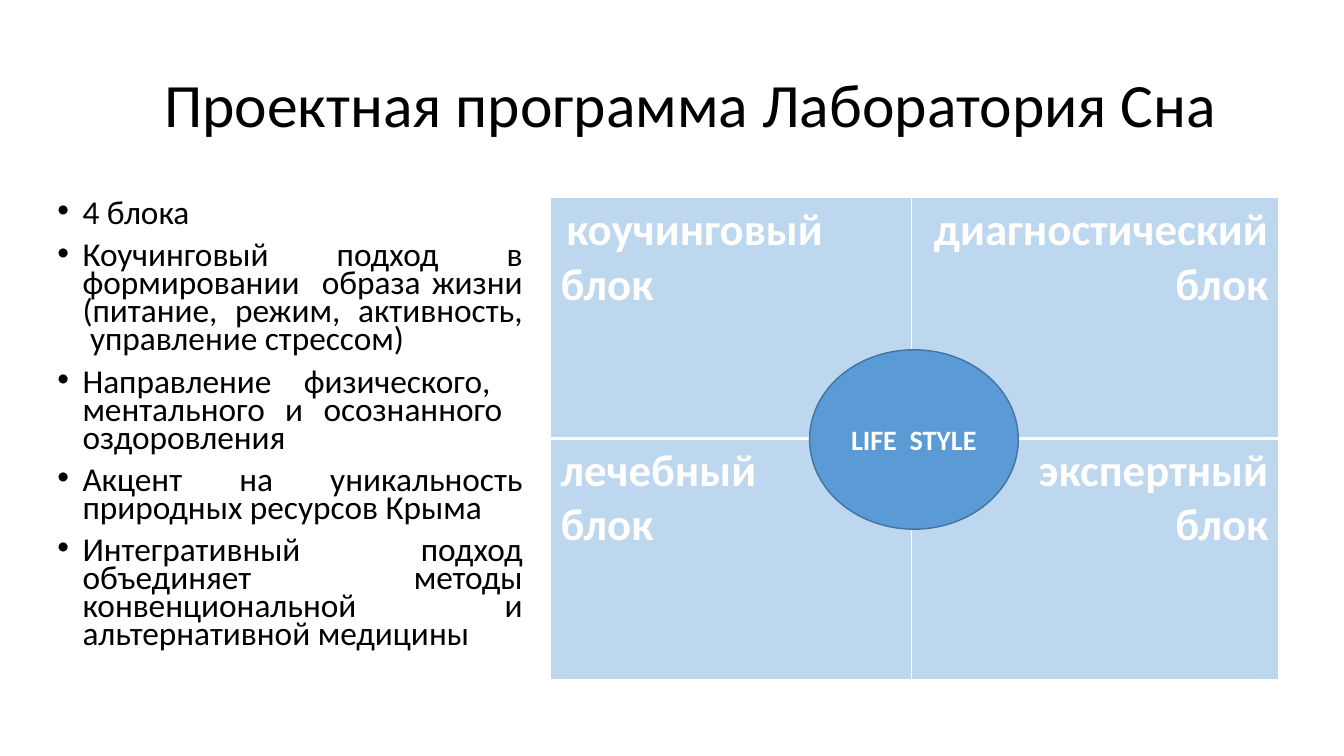
from dataclasses import dataclass

from pptx import Presentation
from pptx.dml.color import RGBColor
from pptx.enum.shapes import MSO_SHAPE
from pptx.enum.text import MSO_ANCHOR, PP_ALIGN
from pptx.oxml.ns import qn
from pptx.util import Inches, Pt
from lxml.etree import SubElement

BLACK = RGBColor(0x00, 0x00, 0x00)
WHITE = RGBColor(0xFF, 0xFF, 0xFF)
PALE = RGBColor(0xBD, 0xD7, 0xEE)
BLUE = RGBColor(0x5B, 0x9B, 0xD5)
NAVY = RGBColor(0x43, 0x73, 0x9E)
FONT = "Calibri"


@dataclass
class Run:
    text: str
    size: float
    color: RGBColor = WHITE
    bold: bool = True


@dataclass
class Block:
    row: int
    col: int
    align: PP_ALIGN
    lines: list[list[Run]]


TITLE = "Проектная программа Лаборатория Сна"
POINTS = [
    "4 блока ",
    "Коучинговый подход в формировании  образа жизни "
    "(питание,  режим,  активность,  управление стрессом)",
    "Направление физического,  ментального и осознанного  оздоровления",
    "Акцент на уникальность природных ресурсов Крыма",
    "Интегративный подход объединяет методы конвенциональной "
    "и альтернативной медицины",
]
BLOCKS = [
    Block(0, 0, PP_ALIGN.LEFT, [[Run(" ", 18), Run("коучинговый блок", 32)]]),
    Block(0, 1, PP_ALIGN.RIGHT, [[Run("диагностический", 32)], [Run(" блок", 32)]]),
    Block(1, 0, PP_ALIGN.LEFT, [[Run("лечебный", 32)], [Run("блок", 32)]]),
    Block(1, 1, PP_ALIGN.RIGHT,
          [[Run(" ", 18), Run("экспертный", 32)], [Run("блок", 32)]]),
]


def write(frame, lines: list[list[Run]], align: PP_ALIGN) -> None:
    """Fill a text frame, one paragraph per line."""
    frame.word_wrap = True
    for i, line in enumerate(lines):
        para = frame.paragraphs[0] if i == 0 else frame.add_paragraph()
        para.alignment = align
        for item in line:
            run = para.add_run()
            run.text = item.text
            run.font.name = FONT
            run.font.size = Pt(item.size)
            run.font.bold = item.bold
            run.font.color.rgb = item.color


def add_box(slide, left: float, top: float, width: float, height: float):
    box = slide.shapes.add_textbox(
        Inches(left), Inches(top), Inches(width), Inches(height))
    return box.text_frame


def add_bullet(para) -> None:
    props = para._p.get_or_add_pPr()
    props.set("marL", str(Inches(0.25)))
    props.set("indent", str(-Inches(0.25)))
    SubElement(props, qn("a:buFont"), typeface="Arial")
    SubElement(props, qn("a:buChar"), char="•")


def add_edge(cell, side: str, width: float) -> None:
    props = cell._tc.get_or_add_tcPr()
    line = SubElement(props, qn(f"a:ln{side}"), w=str(Pt(width)))
    fill = SubElement(line, qn("a:solidFill"))
    SubElement(fill, qn("a:srgbClr"), val=str(WHITE))


def add_grid(slide) -> None:
    shape = slide.shapes.add_table(
        2, 2, Inches(5.46), Inches(1.96), Inches(7.22), Inches(4.78))
    table = shape.table
    for col, width in zip(table.columns, (3.58, 3.64)):
        col.width = Inches(width)
    for row in table.rows:
        row.height = Inches(2.39)
    for block in BLOCKS:
        cell = table.cell(block.row, block.col)
        write(cell.text_frame, block.lines, block.align)
        # The line between the two rows is thicker
        inner = "B" if block.row == 0 else "T"
        for side in "LRTB":
            add_edge(cell, side, 3 if side == inner else 1)
        cell.fill.solid()
        cell.fill.fore_color.rgb = PALE


def main() -> None:
    deck = Presentation()
    deck.slide_width, deck.slide_height = Inches(13.33), Inches(7.5)
    slide = deck.slides.add_slide(deck.slide_layouts[6])

    # Title
    title = add_box(slide, 1.53, 0.34, 11.64, 1.45)
    write(title, [[Run(TITLE, 44, BLACK, False)]], PP_ALIGN.LEFT)
    title.vertical_anchor = MSO_ANCHOR.MIDDLE
    title.paragraphs[0].line_spacing = 0.9

    # Bullet list
    body = add_box(slide, 0.47, 1.96, 4.81, 5.08)
    write(body, [[Run(text, 23.8, BLACK, False)] for text in POINTS],
          PP_ALIGN.JUSTIFY)
    for para in body.paragraphs:
        para.line_spacing = 0.7
        para.space_before = Pt(10)
        add_bullet(para)

    # Four blocks
    add_grid(slide)

    # Centre
    oval = slide.shapes.add_shape(
        MSO_SHAPE.OVAL, Inches(8.03), Inches(3.47), Inches(2.07), Inches(1.78))
    oval.shadow.inherit = False
    oval.fill.solid()
    oval.fill.fore_color.rgb = BLUE
    oval.line.color.rgb = NAVY
    oval.line.width = Pt(1)
    write(oval.text_frame, [[Run("LIFE  STYLE", 20)]], PP_ALIGN.CENTER)
    oval.text_frame.vertical_anchor = MSO_ANCHOR.MIDDLE

    deck.save("out.pptx")


if __name__ == "__main__":
    main()
